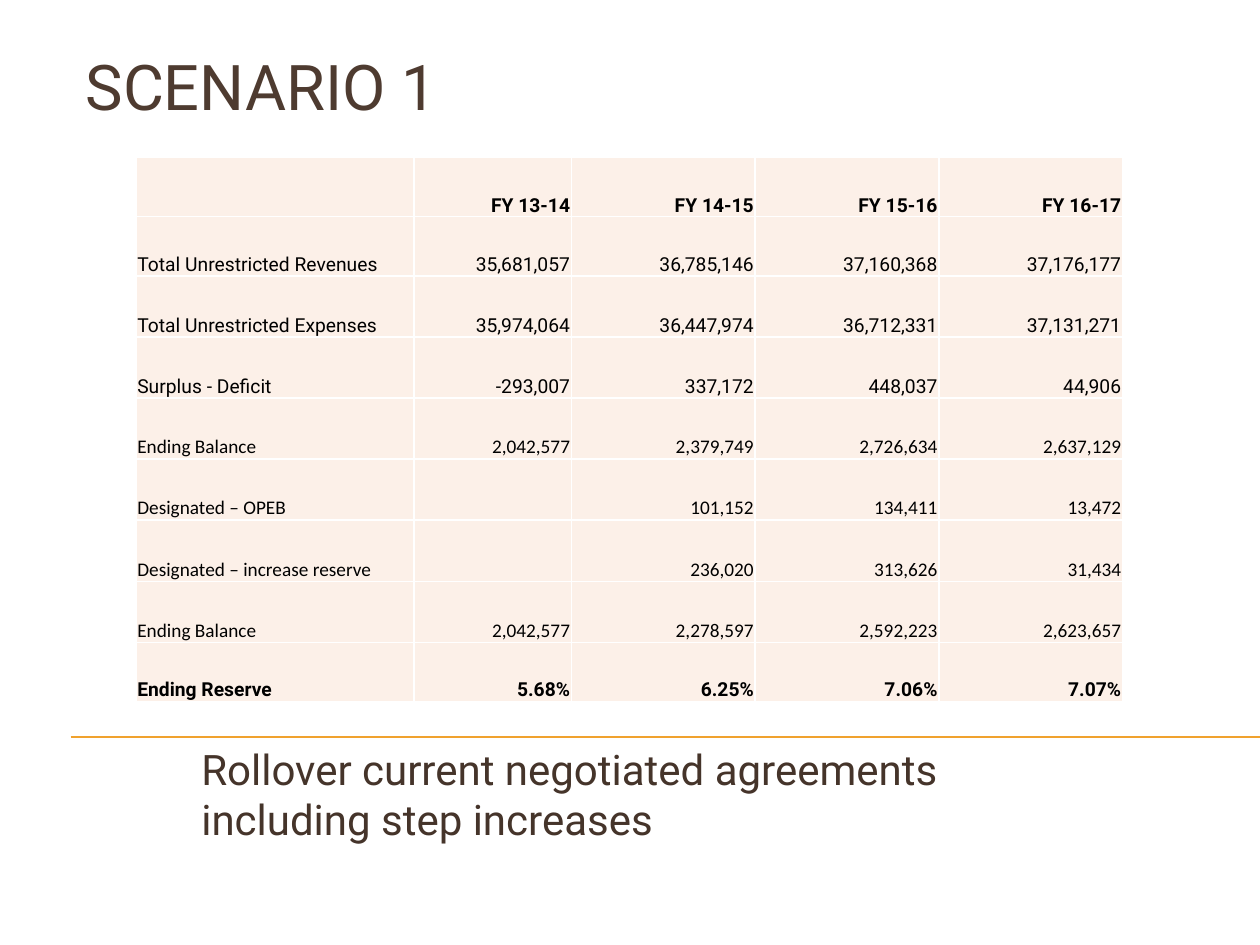
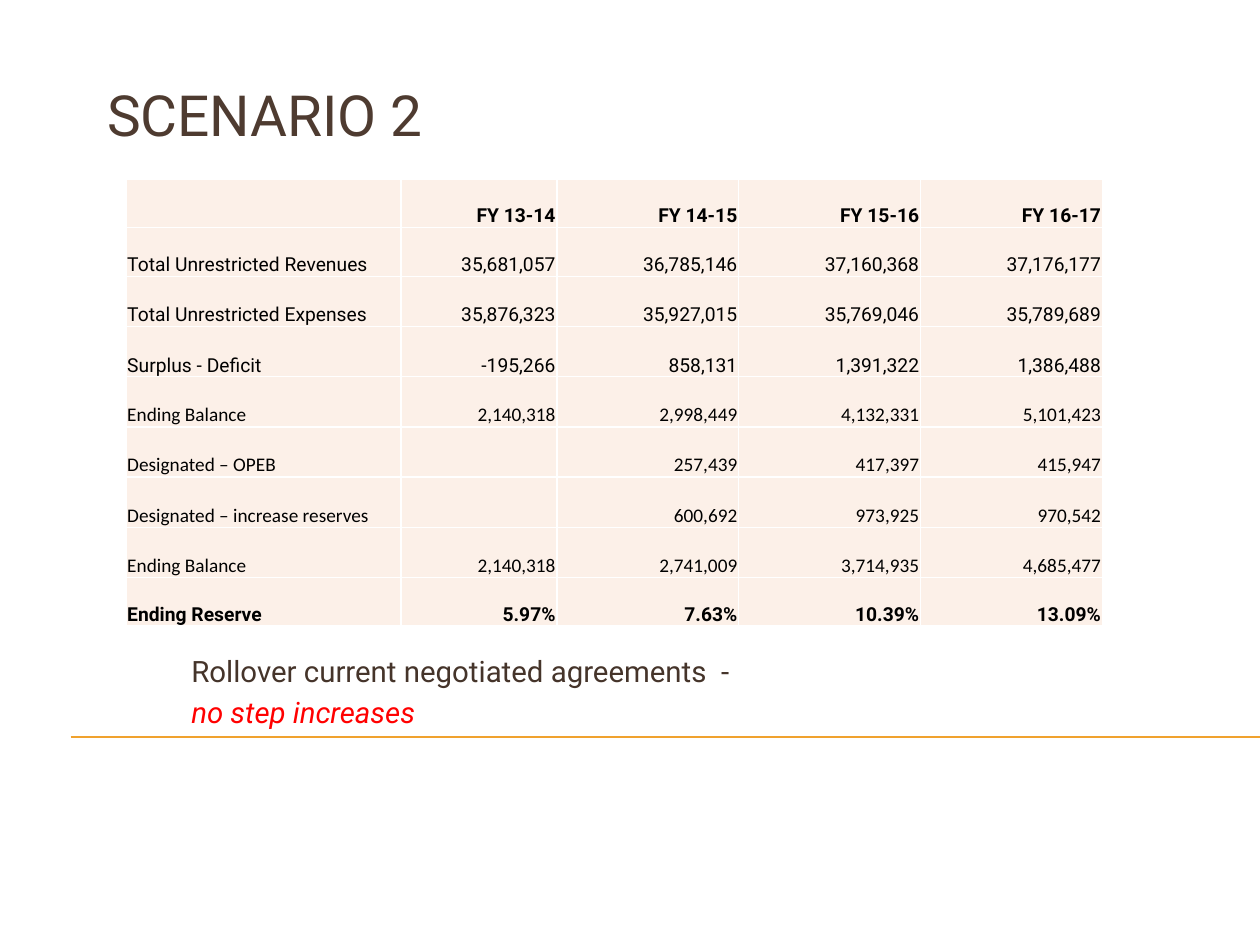
from dataclasses import dataclass
from lxml.etree import SubElement as Sub
from pptx import Presentation
from pptx.dml.color import RGBColor as Rgb
from pptx.enum.shapes import MSO_CONNECTOR as Link
from pptx.enum.text import MSO_ANCHOR as Anchor, MSO_AUTO_SIZE as Fit, PP_ALIGN as Align
from pptx.oxml.ns import qn
from pptx.util import Inches, Pt

# Content
YEARS = ["", "FY 13-14", "FY 14-15", "FY 15-16", "FY 16-17"]
SLIDES = [
    {
        "title": "SCENARIO 1", "title_box": (0.58, 0.33, 8.5, 1.61), "title_size": 36,
        "note": [("Rollover current negotiated agreements including step increases", False)],
        "note_box": (1.5, 5.67, 7, 1.08), "note_size": 24,
        "grid_box": (1.08, 1.25, 7.83, 4.32),
        "rows": [
            ["Total Unrestricted Revenues", "35,681,057", "36,785,146", "37,160,368", "37,176,177"],
            ["Total Unrestricted Expenses", "35,974,064", "36,447,974", "36,712,331", "37,131,271"],
            ["Surplus - Deficit", "-293,007", "337,172", "448,037", "44,906"],
            ["Ending Balance", "2,042,577", "2,379,749", "2,726,634", "2,637,129"],
            ["Designated – OPEB", "", "101,152", "134,411", "13,472"],
            ["Designated – increase reserve", "", "236,020", "313,626", "31,434"],
            ["Ending Balance", "2,042,577", "2,278,597", "2,592,223", "2,623,657"],
            ["Ending Reserve", "5.68%", "6.25%", "7.06%", "7.07%"],
        ],
    },
    {
        "title": "SCENARIO 2", "title_box": (0.75, 0.58, 8.5, 1), "title_size": 32.4,
        "note": [("Rollover current negotiated agreements  -", False),
                 ("no step increases", True)],
        "note_box": (1.42, 5.17, 7, 0.67), "note_size": 16.8,
        "grid_box": (1, 1.42, 7.75, 3.55),
        "rows": [
            ["Total Unrestricted Revenues", "35,681,057", "36,785,146", "37,160,368", "37,176,177"],
            ["Total Unrestricted Expenses", "35,876,323", "35,927,015", "35,769,046", "35,789,689"],
            ["Surplus - Deficit", "-195,266", "858,131", "1,391,322", "1,386,488"],
            ["Ending Balance", "2,140,318", "2,998,449", "4,132,331", "5,101,423"],
            ["Designated – OPEB", "", "257,439", "417,397", "415,947"],
            ["Designated – increase reserves", "", "600,692", "973,925", "970,542"],
            ["Ending Balance", "2,140,318", "2,741,009", "3,714,935", "4,685,477"],
            ["Ending Reserve", "5.97%", "7.63%", "10.39%", "13.09%"],
        ],
    },
]

# Relative sizes of table columns and rows
COLS = [2.21, 1.25, 1.46, 1.46, 1.46]
ROWS = [0.97, 0.97] + [1] * 6 + [0.97]
BOLD = {0, 8}
PLAIN = range(4, 8)  # rows set in the second font


@dataclass(frozen=True)
class Theme:
    head: str = "4E3B30"
    note: str = "45342A"
    alert: str = "FF0000"
    text: str = "000000"
    fill: str = "FCF0E8"
    edge: str = "FFFFFF"
    rule: str = "F0A22E"
    font: str = "Roboto"
    alt: str = "Calibri"
    cell: float = 11
    lead: float = 0.2  # space before, as a share of the type size


LOOK = Theme()


def style(para, size, color, font=LOOK.font, bold=False, slant=False):
    face = para.font
    face.name, face.size = font, Pt(size)
    face.bold, face.italic = bold, slant
    face.color.rgb = Rgb.from_string(color)


def place(shape, box):
    shape.left, shape.top, shape.width, shape.height = map(Inches, box)


def split(total, parts):
    return [Inches(total * part / sum(parts)) for part in parts]


def add_title(slide, text, box, size):
    shape = slide.shapes.title
    place(shape, box)
    frame = shape.text_frame
    frame.text = text
    frame.auto_size, frame.vertical_anchor = Fit.NONE, Anchor.TOP
    para = frame.paragraphs[0]
    para.alignment = Align.LEFT
    style(para, size, LOOK.head)


def add_rule(slide, wide):
    y = Inches(5.85)
    line = slide.shapes.add_connector(Link.STRAIGHT, Inches(0.56), y, wide, y)
    line.line.color.rgb = Rgb.from_string(LOOK.rule)
    line.line.width = Pt(0.75)
    Sub(line.element.spPr, qn("a:effectLst"))


def add_note(slide, lines, box, size):
    frame = slide.shapes.add_textbox(*map(Inches, box)).text_frame
    frame.word_wrap, frame.vertical_anchor = True, Anchor.BOTTOM
    for i, (text, alert) in enumerate(lines):
        para = frame.add_paragraph() if i else frame.paragraphs[0]
        para.text = text
        para.space_before = Pt(size * LOOK.lead)
        style(para, size, LOOK.alert if alert else LOOK.note, slant=alert)


def set_edges(cell):
    props = cell._tc.get_or_add_tcPr()
    for i, side in enumerate(("lnL", "lnR", "lnT", "lnB")):
        edge = props.makeelement(qn("a:" + side), {"w": str(Pt(1))})
        Sub(Sub(edge, qn("a:solidFill")), qn("a:srgbClr"), val=LOOK.edge)
        props.insert(i, edge)  # borders come before the fill


def fill_cell(cell, text, row, col):
    cell.text = text
    cell.vertical_anchor = Anchor.BOTTOM
    cell.margin_left = cell.margin_right = cell.margin_top = Inches(0.01)
    cell.margin_bottom = 0
    cell.fill.solid()
    cell.fill.fore_color.rgb = Rgb.from_string(LOOK.fill)
    set_edges(cell)
    para = cell.text_frame.paragraphs[0]
    para.alignment = Align.RIGHT if col else Align.LEFT
    font = LOOK.alt if row in PLAIN else LOOK.font
    style(para, LOOK.cell, LOOK.text, font, bold=row in BOLD)


def add_grid(slide, rows, box):
    grid = slide.shapes.add_table(len(ROWS), len(COLS), *map(Inches, box)).table
    grid.first_row = grid.horz_banding = False
    for col, wide in zip(grid.columns, split(box[2], COLS)):
        col.width = wide
    for row, high in zip(grid.rows, split(box[3], ROWS)):
        row.height = high
    for r, texts in enumerate([YEARS] + rows):
        for c, text in enumerate(texts):
            fill_cell(grid.cell(r, c), text, r, c)


def main():
    deck = Presentation()
    deck.slide_width, deck.slide_height = Inches(10), Inches(7.5)
    for data in SLIDES:
        slide = deck.slides.add_slide(deck.slide_layouts[5])
        add_rule(slide, deck.slide_width)
        add_title(slide, data["title"], data["title_box"], data["title_size"])
        add_note(slide, data["note"], data["note_box"], data["note_size"])
        add_grid(slide, data["rows"], data["grid_box"])
    deck.save("out.pptx")


if __name__ == "__main__":
    main()
